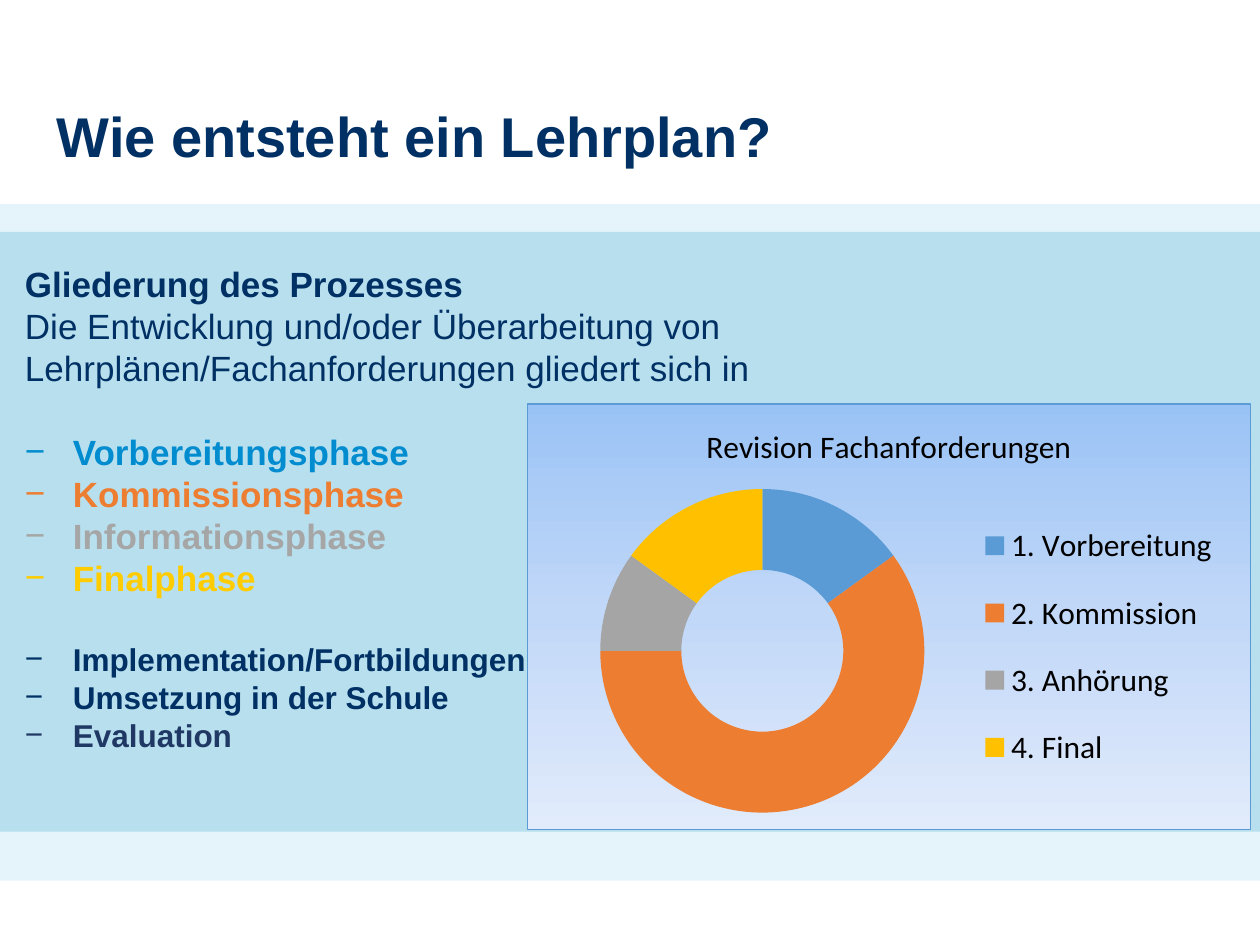
from dataclasses import dataclass

import pptx
import pptx.chart.data
import pptx.dml.color
import pptx.enum.chart
import pptx.enum.shapes
import pptx.enum.text
import pptx.oxml
import pptx.oxml.ns
import pptx.util


@dataclass(frozen=True)
class Theme:
    """Colours, fonts and type sizes of the slide."""
    navy: str = "003064"
    dark: str = "203864"
    blue: str = "008CCF"
    orange: str = "ED7D31"
    grey: str = "A6A6A6"
    yellow: str = "FFCC00"
    band: str = "CCE9F2"
    black: str = "000000"
    border: str = "5B9BD5"
    slices: tuple = ("5B9BD5", "ED7D31", "A5A5A5", "FFC000")
    gradient: tuple = ((0, "9AC3F5"), (50, "C2D8F8"), (100, "E1EBFB"))
    text_font: str = "Arial"
    chart_font: str = "Calibri"
    title_size: int = 32
    body_size: int = 20
    small_size: int = 18
    line_factor: float = 1.2


THEME = Theme()
WIDTH, HEIGHT = pptx.util.Inches(10), pptx.util.Inches(7.5)
NAMESPACES = " ".join(pptx.oxml.ns.nsdecls(prefix) for prefix in ("a", "c"))


def share(left, top, width, height):
    """Turn shares of the slide, in percent, into a box."""
    return tuple(int(part * side / 100) for part, side in
                 zip((left, top, width, height), (WIDTH, HEIGHT) * 2))


def rgb(value):
    """Return the colour for a hex value."""
    return pptx.dml.color.RGBColor.from_string(value)


def style(font, name, size, color, bold=False):
    """Set the face, size, colour and weight of a font."""
    font.name, font.size, font.bold = name, pptx.util.Pt(size), bold
    font.color.rgb = rgb(color)


def add_band(slide, box, color, opacity=100):
    """Draw a full-width background band."""
    shape = slide.shapes.add_shape(pptx.enum.shapes.MSO_SHAPE.RECTANGLE, *box)
    shape.shadow.inherit = False
    shape.fill.solid()
    shape.fill.fore_color.rgb = rgb(color)
    shape.line.fill.background()
    if opacity < 100:
        color_element = shape.fill._xPr.find(".//" + pptx.oxml.ns.qn("a:srgbClr"))
        color_element.append(pptx.oxml.parse_xml(
            f'<a:alpha {NAMESPACES} val="{opacity * 1000}"/>'))


def place_title(slide, box, text):
    """Move and format the title placeholder."""
    title = slide.shapes.title
    title.left, title.top, title.width, title.height = box
    frame = title.text_frame
    frame.text = text
    frame.vertical_anchor = pptx.enum.text.MSO_ANCHOR.MIDDLE
    paragraph = frame.paragraphs[0]
    paragraph.alignment = pptx.enum.text.PP_ALIGN.LEFT
    style(paragraph.runs[0].font, THEME.text_font, THEME.title_size, THEME.navy, True)


def add_dash(paragraph):
    """Give a paragraph a hanging dash."""
    properties = paragraph._p.get_or_add_pPr()
    indent = pptx.util.Inches(0.38)
    properties.set("marL", str(indent))
    properties.set("indent", str(-indent))
    for tag in ('buFont typeface="Arial"', 'buChar char="−"'):
        properties.append(pptx.oxml.parse_xml(f"<a:{tag} {NAMESPACES}/>"))


def add_process_text(slide, box):
    """Write the heading, the introduction and the two dashed lists."""
    large, small = THEME.body_size, THEME.small_size
    groups = (
        (False, large, (("Gliederung des Prozesses", THEME.navy, True),
                        ("Die Entwicklung und/oder Überarbeitung von", THEME.navy, False),
                        ("Lehrplänen/Fachanforderungen gliedert sich in", THEME.navy, False))),
        (True, large, (("Vorbereitungsphase", THEME.blue, True),
                       ("Kommissionsphase", THEME.orange, True),
                       ("Informationsphase", THEME.grey, True),
                       ("Finalphase", THEME.yellow, True))),
        (True, small, (("Implementation/Fortbildungen", THEME.navy, True),
                       ("Umsetzung in der Schule", THEME.navy, True),
                       ("Evaluation", THEME.dark, True))),
    )
    frame = slide.shapes.add_textbox(*box).text_frame
    frame.word_wrap = True
    paragraph = None
    for dashed, size, lines in groups:
        for index, (text, color, bold) in enumerate(lines):
            starts_group = paragraph is not None and index == 0
            paragraph = frame.add_paragraph() if paragraph is not None else frame.paragraphs[0]
            paragraph.text = text
            paragraph.line_spacing = pptx.util.Pt(size * THEME.line_factor)
            if starts_group:
                paragraph.space_before = pptx.util.Pt(large * THEME.line_factor)
            if dashed:
                add_dash(paragraph)
            style(paragraph.runs[0].font, THEME.text_font, size, color, bold)


def set_layout(parent, before, box, inner=False):
    """Place a chart part by shares of the chart area."""
    for old in parent.findall(pptx.oxml.ns.qn("c:layout")):
        parent.remove(old)
    target = '<c:layoutTarget val="inner"/>' if inner else ""
    modes = "".join(f'<c:{axis}Mode val="edge"/>' for axis in "xy")
    sizes = "".join(f'<c:{name} val="{value}"/>' for name, value in zip("xywh", box))
    layout = pptx.oxml.parse_xml(
        f"<c:layout {NAMESPACES}><c:manualLayout>{target}{modes}{sizes}"
        "</c:manualLayout></c:layout>")
    parent.find(pptx.oxml.ns.qn(before)).addprevious(layout)


def fill_chart_area(chart):
    """Give the chart area its gradient and border."""
    stops = "".join(f'<a:gs pos="{position * 1000}"><a:srgbClr val="{color}"/></a:gs>'
                    for position, color in THEME.gradient)
    area = pptx.oxml.parse_xml(
        f"<c:spPr {NAMESPACES}><a:gradFill><a:gsLst>{stops}</a:gsLst>"
        f'<a:lin ang="5400000" scaled="0"/></a:gradFill><a:ln w="{pptx.util.Pt(0.75)}">'
        f'<a:solidFill><a:srgbClr val="{THEME.border}"/></a:solidFill></a:ln></c:spPr>')
    chart._chartSpace.find(pptx.oxml.ns.qn("c:chart")).addnext(area)


def add_revision_chart(slide, box):
    """Add the doughnut chart of the revision phases."""
    name = "Revision Fachanforderungen"
    data = pptx.chart.data.CategoryChartData()
    data.categories = ["1. Vorbereitung", "2. Kommission", "3. Anhörung", "4. Final"]
    data.add_series(name, (15, 60, 10, 15))
    chart = slide.shapes.add_chart(
        pptx.enum.chart.XL_CHART_TYPE.DOUGHNUT, *box, data).chart
    style(chart.font, THEME.chart_font, THEME.small_size, THEME.black)
    chart.has_title = True
    chart.chart_title.include_in_layout = False
    title = chart.chart_title.text_frame
    title.text = name
    style(title.paragraphs[0].runs[0].font, THEME.chart_font, THEME.small_size, THEME.black)
    chart.has_legend = True
    chart.legend.position = pptx.enum.chart.XL_LEGEND_POSITION.RIGHT
    chart.legend.include_in_layout = False
    style(chart.legend.font, THEME.chart_font, THEME.small_size, THEME.black)
    plot = chart.plots[0]
    plot.vary_by_categories = True
    for index, color in enumerate(THEME.slices):
        fill = plot.series[0].points[index].format.fill
        fill.solid()
        fill.fore_color.rgb = rgb(color)
    plot_area = chart._chartSpace.find(".//" + pptx.oxml.ns.qn("c:plotArea"))
    set_layout(plot_area, "c:doughnutChart", (0.1, 0.2, 0.45, 0.76), inner=True)
    set_layout(chart.legend._element, "c:overlay", (0.62, 0.22, 0.34, 0.7))
    fill_chart_area(chart)


def main():
    """Build the slide and save it."""
    presentation = pptx.Presentation()
    presentation.slide_width, presentation.slide_height = WIDTH, HEIGHT
    slide = presentation.slides.add_slide(presentation.slide_layouts[5])
    add_band(slide, share(0, 24.53, 100, 63.47), THEME.band)
    add_band(slide, share(0, 21.6, 100, 71.6), THEME.blue, opacity=10)
    place_title(slide, share(3.5, 10, 64.9, 8.53), "Wie entsteht ein Lehrplan?")
    add_process_text(slide, share(1, 27.07, 60, 59.73))
    add_revision_chart(slide, share(41.8, 42.67, 57.5, 45.2))
    presentation.save("out.pptx")


if __name__ == "__main__":
    main()
